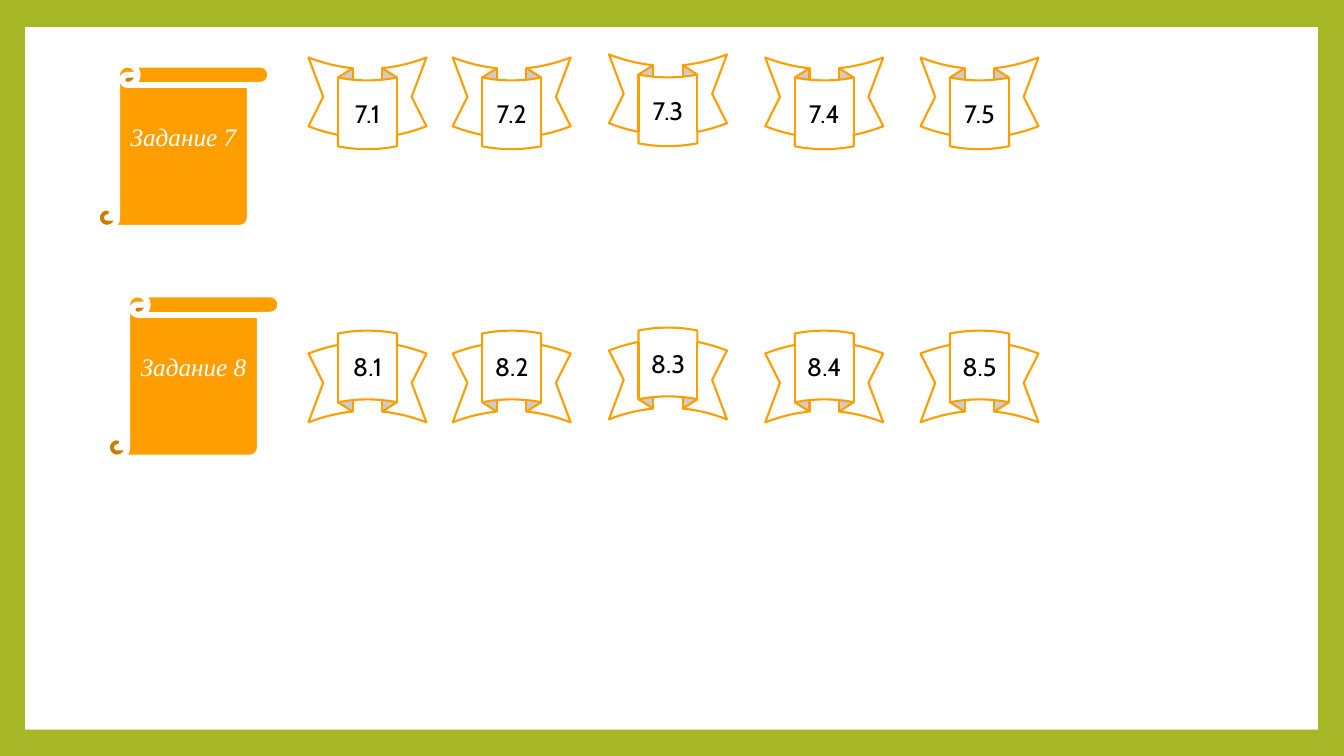
"""Build a task board with two scrolls and a row of numbered ribbons beside each."""
from dataclasses import dataclass

from pptx import Presentation
from pptx.dml.color import RGBColor
from pptx.enum.shapes import MSO_SHAPE
from pptx.enum.text import MSO_ANCHOR, PP_ALIGN
from pptx.util import Inches, Pt


@dataclass(frozen=True)
class Theme:
    frame: RGBColor = RGBColor(0xA6, 0xB7, 0x27)
    paper: RGBColor = RGBColor(0xFF, 0xFF, 0xFF)
    accent: RGBColor = RGBColor(0xFE, 0x9E, 0x00)
    ink: RGBColor = RGBColor(0x00, 0x00, 0x00)
    number_font: str = "Cabin"
    task_font: str = "Times New Roman"
    text_size: int = 18
    ribbon_line: float = 1.5
    scroll_line: float = 4.25


class TaskBoard:
    def __init__(self, slide, theme):
        self.slide = slide
        self.theme = theme

    def background(self):
        fill = self.slide.background.fill
        fill.solid()
        fill.fore_color.rgb = self.theme.frame

    def shape(self, kind, box, fill, line=None, width=0):
        shape = self.slide.shapes.add_shape(kind, *map(Inches, box))
        shape.shadow.inherit = False
        shape.fill.solid()
        shape.fill.fore_color.rgb = fill
        if line is None:
            shape.line.fill.background()
        else:
            shape.line.color.rgb = line
            shape.line.width = Pt(width)
        return shape

    def label(self, shape, text, color, **font_format):
        frame = shape.text_frame
        frame.word_wrap = True
        frame.vertical_anchor = MSO_ANCHOR.MIDDLE
        paragraph = frame.paragraphs[0]
        paragraph.alignment = PP_ALIGN.CENTER
        run = paragraph.add_run()
        run.text = text
        run.font.color.rgb = color
        font_format["size"] = Pt(self.theme.text_size)
        for name, value in font_format.items():
            setattr(run.font, name, value)

    def sheet(self):
        self.shape(MSO_SHAPE.RECTANGLE, (0.25, 0.27, 12.82, 6.97), self.theme.paper)

    def ribbon(self, kind, left, top, number):
        theme = self.theme
        ribbon = self.shape(kind, (left, top, 1.17, 0.91), theme.paper,
                            theme.accent, theme.ribbon_line)
        self.label(ribbon, number, theme.ink, name=theme.number_font)

    def scroll(self, left, top, task):
        theme = self.theme
        scroll = self.shape(MSO_SHAPE.VERTICAL_SCROLL, (left, top, 1.72, 1.62),
                            theme.accent, theme.paper, theme.scroll_line)
        self.label(scroll, task, theme.paper, name=theme.task_font, italic=True)
        scroll.text_frame.margin_bottom = Inches(0.34)


RIBBON_PLACES = [(3.06, 0), (4.49, 0), (6.04, -0.03), (7.59, 0), (9.13, 0)]
TASKS = [
    (7, MSO_SHAPE.CURVED_DOWN_RIBBON, 0.57, (0.96, 0.64)),
    (8, MSO_SHAPE.CURVED_UP_RIBBON, 3.28, (1.06, 2.92)),
]


def main():
    presentation = Presentation()
    presentation.slide_width = Inches(13.33)
    presentation.slide_height = Inches(7.5)
    board = TaskBoard(presentation.slides.add_slide(presentation.slide_layouts[6]), Theme())
    board.background()
    board.sheet()
    for task, ribbon_kind, ribbon_top, scroll_place in TASKS:
        for step, (left, shift) in enumerate(RIBBON_PLACES, 1):
            board.ribbon(ribbon_kind, left, ribbon_top + shift, f"{task}.{step}")
        board.scroll(*scroll_place, f"Задание {task}")
    presentation.save("out.pptx")


if __name__ == "__main__":
    main()
